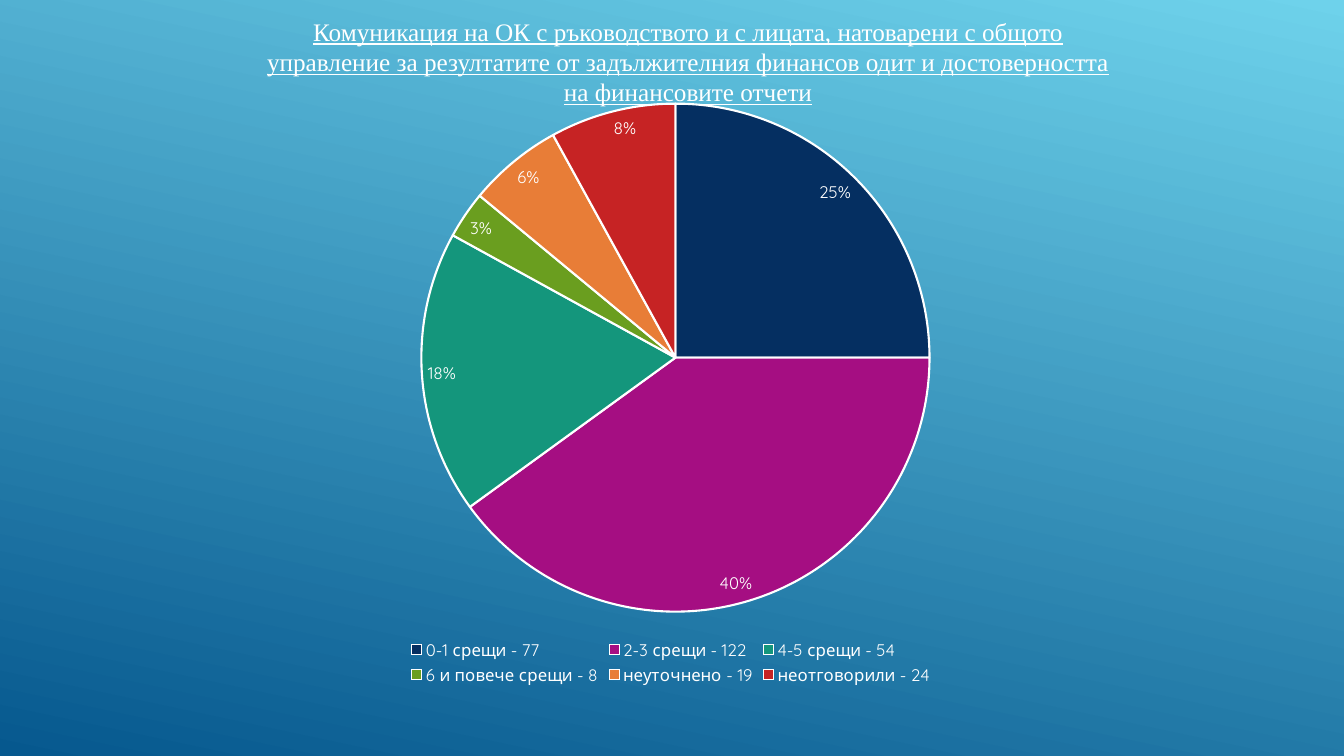
from dataclasses import dataclass

from lxml import etree
from pptx import Presentation
from pptx import util as u
from pptx.chart.data import CategoryChartData
from pptx.dml.color import RGBColor
from pptx.enum import chart as charts, text

TITLE = (
    "Комуникация на ОК с ръководството и с лицата, натоварени с общото "
    "управление за резултатите от задължителния финансов одит и "
    "достоверността на финансовите отчети"
)
MEETINGS = [
    ("0-1 срещи - 77", 0.25, "052F61"),
    ("2-3 срещи - 122", 0.40, "A50E82"),
    ("4-5 срещи - 54", 0.18, "14967C"),
    ("6 и повече срещи - 8", 0.03, "6A9E1F"),
    ("неуточнено - 19", 0.06, "E87D37"),
    ("неотговорили - 24", 0.08, "C62324"),
]
SLIDE = (13.33, 7.5)
TITLE_BOX = (2.41, 0.11, 8.83, 1.06)
CHART_BOX = (2.21, 0.91, 8.89, 5.93)
PIE_SHARES = {"x": 0.22, "y": 0.02, "w": 0.57, "h": 0.85}


@dataclass(frozen=True)
class Theme:
    sky: str = "6ED2EB"
    deep: str = "06588E"
    light: str = "FFFFFF"
    title_font: str = "Times New Roman"
    chart_font: str = "Quicksand"
    title_size: int = 18
    chart_size: int = 12
    slice_line: float = 1.5
    gradient_angle: int = 258


THEME = Theme()


def color(value):
    return RGBColor.from_string(value)


def inches(box):
    return [u.Inches(length) for length in box]


def style_font(font, name, size):
    font.name = name
    font.size = u.Pt(size)
    font.color.rgb = color(THEME.light)


def paint_background(slide):
    fill = slide.background.fill
    fill.gradient()
    fill.gradient_angle = THEME.gradient_angle
    for stop, value in zip(fill.gradient_stops, (THEME.sky, THEME.deep)):
        stop.color.rgb = color(value)


def place_pie(chart):
    plot_area = chart.plots[0]._element.getparent()
    namespace = etree.QName(plot_area).namespace
    for layout in plot_area.findall(f"{{{namespace}}}layout"):
        plot_area.remove(layout)
    layout = etree.Element(f"{{{namespace}}}layout")
    manual = etree.SubElement(layout, f"{{{namespace}}}manualLayout")
    settings = {"layoutTarget": "inner", "xMode": "edge", "yMode": "edge", **PIE_SHARES}
    for name, value in settings.items():
        etree.SubElement(manual, f"{{{namespace}}}{name}", val=str(value))
    plot_area.insert(0, layout)


def add_pie(slide):
    chart_data = CategoryChartData(number_format="0%")
    chart_data.categories = [name for name, _, _ in MEETINGS]
    chart_data.add_series("Series 1", [share for _, share, _ in MEETINGS])
    chart = slide.shapes.add_chart(
        charts.XL_CHART_TYPE.PIE, *inches(CHART_BOX), chart_data
    ).chart
    chart.has_title = False
    style_font(chart.font, THEME.chart_font, THEME.chart_size)
    chart.has_legend = True
    chart.legend.position = charts.XL_LEGEND_POSITION.BOTTOM
    chart.legend.include_in_layout = False
    style_font(chart.legend.font, THEME.chart_font, THEME.chart_size)

    plot = chart.plots[0]
    plot.vary_by_categories = True
    plot.has_data_labels = True
    labels = plot.data_labels
    labels.show_value = True
    labels.show_percentage = False
    labels.number_format = "0%"
    labels.number_format_is_linked = False
    labels.position = charts.XL_LABEL_POSITION.INSIDE_END
    style_font(labels.font, THEME.chart_font, THEME.chart_size)
    for index, (_, _, value) in enumerate(MEETINGS):
        pie_slice = plot.series[0].points[index].format
        pie_slice.fill.solid()
        pie_slice.fill.fore_color.rgb = color(value)
        pie_slice.line.color.rgb = color(THEME.light)
        pie_slice.line.width = u.Pt(THEME.slice_line)
    place_pie(chart)


def add_title(slide):
    frame = slide.shapes.add_textbox(*inches(TITLE_BOX)).text_frame
    frame.word_wrap = True
    frame.vertical_anchor = text.MSO_ANCHOR.TOP
    paragraph = frame.paragraphs[0]
    paragraph.text = TITLE
    paragraph.alignment = text.PP_ALIGN.CENTER
    paragraph.space_after = u.Pt(6)
    style_font(paragraph.font, THEME.title_font, THEME.title_size)
    paragraph.font.underline = True


def main():
    presentation = Presentation()
    presentation.slide_width, presentation.slide_height = inches(SLIDE)
    slide = presentation.slides.add_slide(presentation.slide_layouts[6])
    paint_background(slide)
    add_pie(slide)
    add_title(slide)
    presentation.save("out.pptx")


if __name__ == "__main__":
    main()
